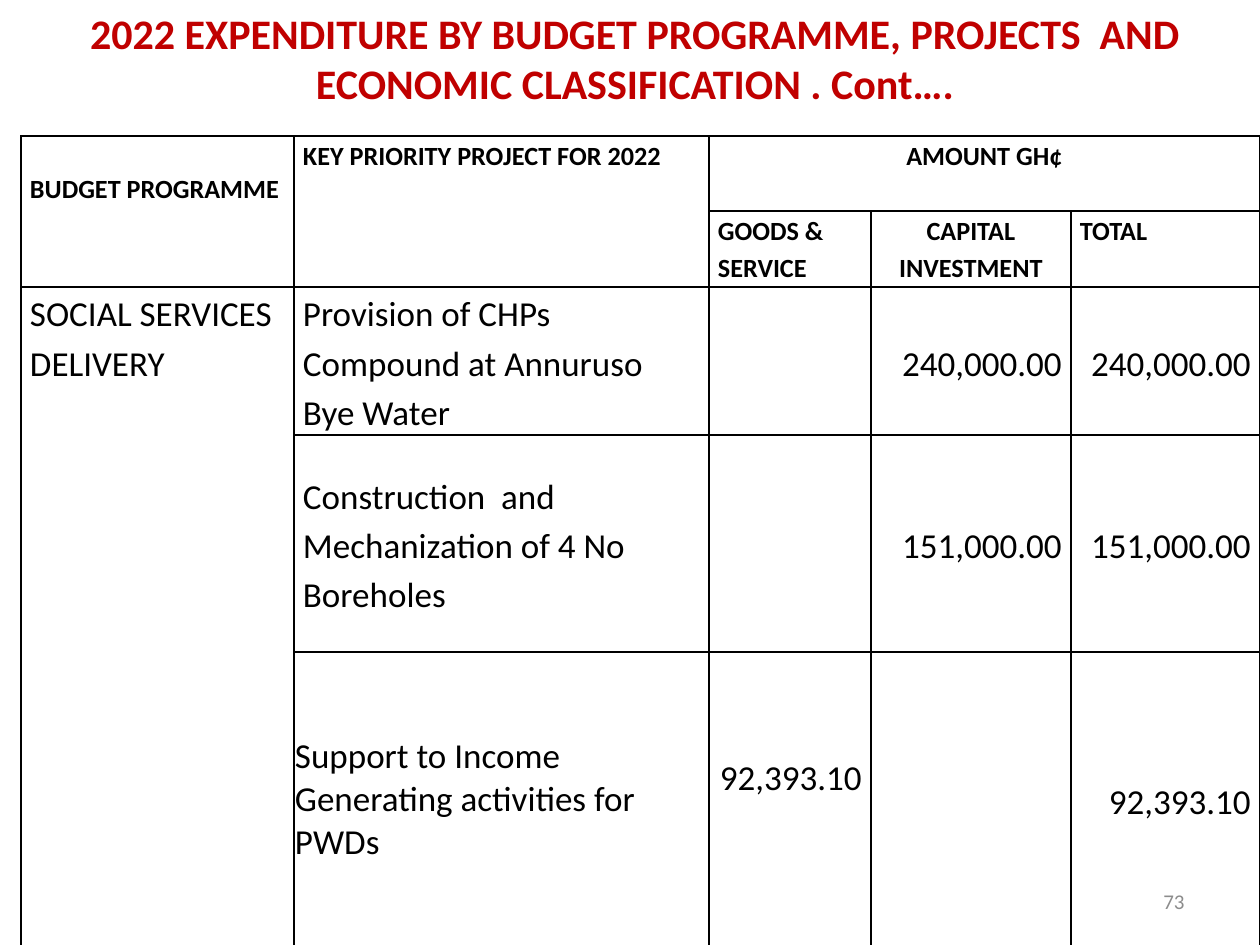
import pptx
import pptx.dml.color
import pptx.enum.text
import pptx.oxml
import pptx.oxml.ns
import pptx.util

COLORS = {"title": "C00000", "ink": "000000", "paper": "FFFFFF", "number": "8C8C8C"}
FONT = "Calibri"
ALIGN = pptx.enum.text.PP_ALIGN
ANCHOR = pptx.enum.text.MSO_ANCHOR

COLUMNS = [273, 415, 162, 200, 189]
ROWS = [75, 76, 148, 217, 295]
MERGES = [((0, 0), (1, 0)), ((0, 1), (1, 1)), ((0, 2), (0, 4)), ((2, 0), (4, 0))]
HEADERS = {
    (0, 0): ("BUDGET PROGRAMME", ALIGN.LEFT),
    (0, 1): ("KEY PRIORITY PROJECT FOR 2022", ALIGN.LEFT),
    (0, 2): ("AMOUNT GH¢", ALIGN.CENTER),
    (1, 2): ("GOODS & SERVICE", ALIGN.LEFT),
    (1, 3): ("CAPITAL INVESTMENT", ALIGN.CENTER),
    (1, 4): ("TOTAL", ALIGN.LEFT),
}
PROGRAMME = "SOCIAL SERVICES DELIVERY"
PROJECTS = [
    ("Provision of CHPs Compound at Annuruso  Bye Water", "", "240,000.00", "240,000.00"),
    ("Construction  and Mechanization of 4 No Boreholes", "", "151,000.00", "151,000.00"),
    ("Support to Income Generating activities for PWDs", "92,393.10", "", "92,393.10"),
]


def px(length):
    return pptx.util.Emu(round(length * 914400 / 126))


def place(shape, box):
    shape.left, shape.top, shape.width, shape.height = map(px, box)


def write(frame, text, size, color, align, bold=False, spacing=None):
    frame.text = text
    frame.word_wrap = True
    paragraph = frame.paragraphs[0]
    paragraph.alignment = align
    if spacing:
        paragraph.line_spacing = spacing
    for run in paragraph.runs:
        run.font.name = FONT
        run.font.size = pptx.util.Pt(size)
        run.font.bold = bold
        run.font.color.rgb = pptx.dml.color.RGBColor.from_string(COLORS[color])


def set_margins(cell, left, top, right, bottom):
    cell.margin_left, cell.margin_top = px(left), px(top)
    cell.margin_right, cell.margin_bottom = px(right), px(bottom)


def style_cell(cell):
    """Give the cell a plain fill, narrow margins and a thin line on each side."""
    cell.fill.solid()
    cell.fill.fore_color.rgb = pptx.dml.color.RGBColor.from_string(COLORS["paper"])
    set_margins(cell, 9, 0, 9, 0)
    properties = cell._tc.get_or_add_tcPr()
    for index, side in enumerate("LRTB"):
        properties.insert(index, pptx.oxml.parse_xml(
            f'<a:ln{side} {pptx.oxml.ns.nsdecls("a")} w="12700"><a:solidFill>'
            f'<a:srgbClr val="{COLORS["ink"]}"/></a:solidFill></a:ln{side}>'))


def add_title(slide, box):
    title = slide.shapes.title
    place(title, box)
    frame = title.text_frame
    write(frame, "2022 EXPENDITURE BY BUDGET PROGRAMME, PROJECTS  AND "
                 "ECONOMIC CLASSIFICATION . Cont….", 24, "title", ALIGN.CENTER, bold=True)
    frame.auto_size = pptx.enum.text.MSO_AUTO_SIZE.NONE
    frame.vertical_anchor = ANCHOR.MIDDLE


def add_expenditure(slide, box):
    table = slide.shapes.add_table(len(ROWS), len(COLUMNS), *map(px, box)).table
    for column, width in zip(table.columns, COLUMNS):
        column.width = px(width)
    for row, height in zip(table.rows, ROWS):
        row.height = px(height)
    for cell in table.iter_cells():
        style_cell(cell)
    for first, last in MERGES:
        table.cell(*first).merge(table.cell(*last))

    for position, (label, align) in HEADERS.items():
        write(table.cell(*position).text_frame, label, 15, "ink", align, True, 1.15)
    table.cell(0, 0).margin_top = px(33)

    write(table.cell(2, 0).text_frame, PROGRAMME, 20, "ink", ALIGN.LEFT, spacing=1.15)
    for row, project in enumerate(PROJECTS, start=2):
        for column, text in enumerate(project, start=1):
            if text:
                cell = table.cell(row, column)
                align = ALIGN.LEFT if column == 1 else ALIGN.RIGHT
                write(cell.text_frame, text, 20, "ink", align, spacing=1.15)
                cell.vertical_anchor = ANCHOR.MIDDLE

    support = table.cell(4, 1)
    set_margins(support, 1, 1, 1, 0)
    support.text_frame.paragraphs[0].line_spacing = 1.0
    table.cell(4, 2).margin_bottom = px(49)


def add_page_number(slide, box):
    frame = slide.shapes.add_textbox(*map(px, box)).text_frame
    write(frame, "73", 12, "number", ALIGN.RIGHT)
    frame.vertical_anchor = ANCHOR.MIDDLE


def main():
    deck = pptx.Presentation()
    deck.slide_width, deck.slide_height = px(1260), px(945)
    slide = deck.slides.add_slide(deck.slide_layouts[5])
    add_expenditure(slide, (21, 136, sum(COLUMNS), sum(ROWS)))
    add_title(slide, (21, 10, 1228, 95))
    add_page_number(slide, (903, 876, 294, 50))
    deck.save("out.pptx")


if __name__ == "__main__":
    main()
